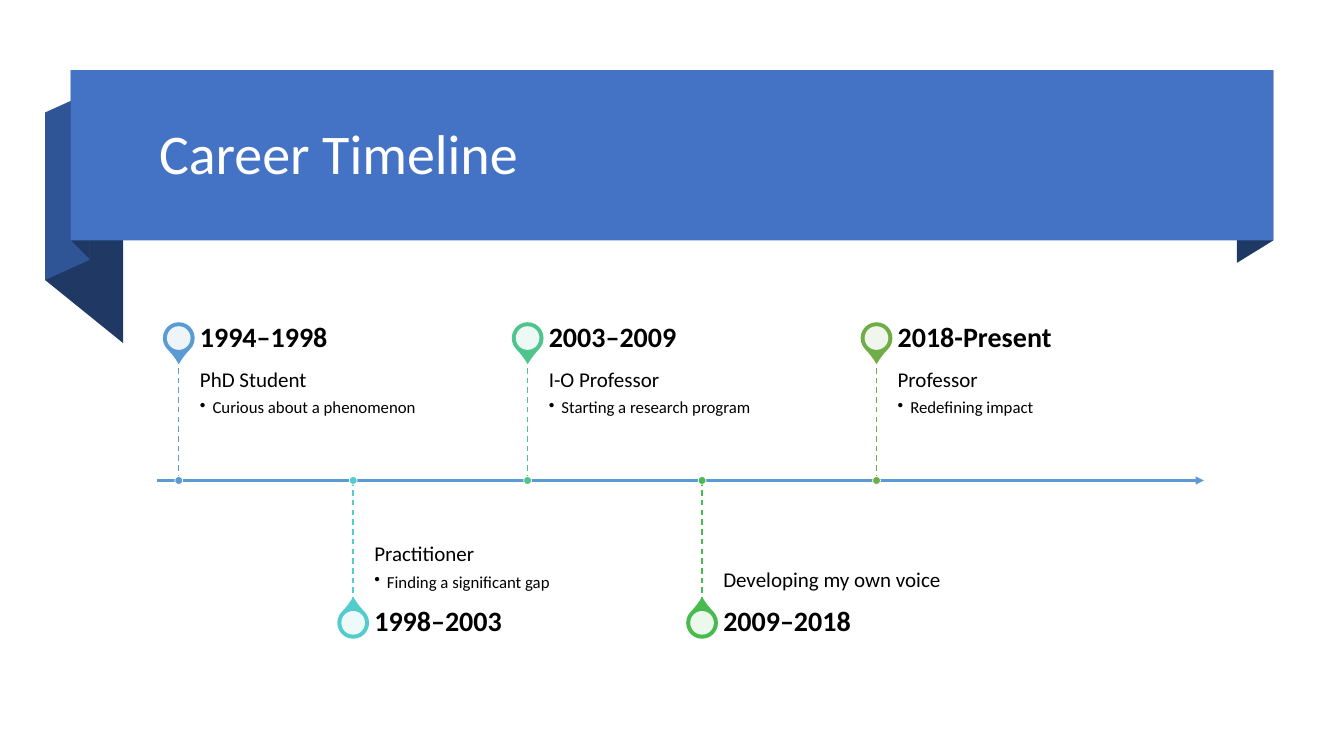
from pptx import Presentation
from pptx.dml.color import RGBColor
from pptx.enum.dml import MSO_LINE
from pptx.enum.shapes import MSO_CONNECTOR, MSO_SHAPE
from pptx.enum.text import MSO_ANCHOR, MSO_AUTO_SIZE, PP_ALIGN
from pptx.oxml.ns import qn
from pptx.util import Pt
from lxml.etree import SubElement

FONT = "Calibri"
MILESTONES = [
    ("1994–1998", "PhD Student", "Curious about a phenomenon", "5B9BD5"),
    ("1998–2003", "Practitioner", "Finding a significant gap", "54CCCD"),
    ("2003–2009", "I-O Professor", "Starting a research program", "4DC58D"),
    ("2009–2018", "Developing my own voice", None, "48BB4F"),
    ("2018-Present", "Professor", "Redefining impact", "70AD47"),
]


def color(value):
    return RGBColor.from_string(value)


def paint(shape, fill, line=None, line_width=1):
    shape.shadow.inherit = False
    shape.fill.solid()
    shape.fill.fore_color.rgb = color(fill)
    if line:
        shape.line.color.rgb = color(line)
        shape.line.width = Pt(line_width)
    else:
        shape.line.fill.background()


def add_polygon(slide, left, top, points, fill):
    corners = [(Pt(left + x), Pt(top + y)) for x, y in points]
    builder = slide.shapes.build_freeform(*corners[0], scale=1.0)
    builder.add_line_segments(corners[1:], close=True)
    paint(builder.convert_to_shape(), fill)


def add_centered(slide, kind, x, y, size):
    return slide.shapes.add_shape(
        kind, Pt(x - size / 2), Pt(y - size / 2), Pt(size), Pt(size))


def add_line(slide, x1, y1, x2, y2, line_color, width):
    line = slide.shapes.add_connector(
        MSO_CONNECTOR.STRAIGHT, Pt(x1), Pt(y1), Pt(x2), Pt(y2))
    line.line.color.rgb = color(line_color)
    line.line.width = Pt(width)
    SubElement(line._element.spPr, qn("a:effectLst"))
    return line


def set_frame(frame, anchor, margins):
    frame.word_wrap = True
    frame.auto_size = MSO_AUTO_SIZE.NONE
    frame.vertical_anchor = anchor
    (frame.margin_left, frame.margin_top,
     frame.margin_right, frame.margin_bottom) = [Pt(margin) for margin in margins]


def write(paragraph, text, size, text_color="000000", bold=False, space_after=0):
    paragraph.alignment = PP_ALIGN.LEFT
    paragraph.line_spacing = 0.9
    paragraph.space_after = Pt(space_after)
    run = paragraph.add_run()
    run.text = text
    run.font.name = FONT
    run.font.size = Pt(size)
    run.font.bold = bold
    run.font.color.rgb = color(text_color)


def add_bullet(paragraph):
    paragraph.level = 1
    properties = paragraph._p.get_or_add_pPr()
    properties.set("marL", str(Pt(9)))
    properties.set("indent", str(Pt(-9)))
    SubElement(properties, qn("a:buChar")).set("char", "•")


def add_ribbon(slide, left, top, width, height):
    folds = [
        ([(width, height), (width - 26, height + 16),
          (width - 26, 15), (width, 0)], "203864"),
        ([(37.4, 194.8), (-18.3, 149.8), (-18.3, 30.2), (37.4, 75.6)], "203864"),
        ([(13.5, 135.4), (-18.3, 149.8), (-18.3, 30.2), (13.5, 15.8)], "2F5597"),
        ([(13.5, 134.8), (0.2, height), (0.2, 0), (13.5, 13.7)], "203864"),
    ]
    for points, fill in folds:
        add_polygon(slide, left, top, points, fill)
    band = slide.shapes.add_shape(
        MSO_SHAPE.RECTANGLE, Pt(left), Pt(top), Pt(width), Pt(height))
    paint(band, "4472C4")

    title = slide.shapes.title
    title.left, title.top = Pt(left + 56), Pt(top + 9.4)
    title.width, title.height = Pt(787.7), Pt(104.4)
    set_frame(title.text_frame, MSO_ANCHOR.MIDDLE, (7.2, 3.6, 7.2, 3.6))
    write(title.text_frame.paragraphs[0], "Career Timeline", 40, "FFFFFF")
    title._element.getparent().append(title._element)


def add_milestone(slide, x, axis, above, milestone):
    years, role, detail, accent = milestone
    stem, label_height, text_left, text_width = 86.6, 30.2, x + 15.1, 207.4
    direction = -1 if above else 1
    stem_end = axis + direction * stem
    pin_y = stem_end + direction * label_height / 2

    pin = add_centered(slide, MSO_SHAPE.TEAR, x, pin_y, 21.7)
    pin.adjustments[0] = 1.15
    pin.rotation = 135 if above else 315
    paint(pin, accent, accent)
    center = add_centered(slide, MSO_SHAPE.OVAL, x, pin_y, 16.9)
    paint(center, "FFFFFF")
    fill_color = center._element.spPr.find(qn("a:solidFill"))[0]
    SubElement(fill_color, qn("a:alpha")).set("val", "90000")

    body = slide.shapes.add_textbox(
        Pt(text_left), Pt(min(axis, stem_end)), Pt(text_width), Pt(stem)).text_frame
    if above:
        set_frame(body, MSO_ANCHOR.TOP, (0, 7.2, 7.2, 11.5))
    else:
        set_frame(body, MSO_ANCHOR.BOTTOM, (0, 11.5, 0, 7.2))
    write(body.paragraphs[0], role, 15, space_after=5.25)
    if detail:
        paragraph = body.add_paragraph()
        write(paragraph, detail, 12, space_after=1.8)
        add_bullet(paragraph)

    label = slide.shapes.add_textbox(
        Pt(text_left), Pt(pin_y - label_height / 2),
        Pt(text_width), Pt(label_height)).text_frame
    set_frame(label, MSO_ANCHOR.MIDDLE, (0, 0, 10.1, 0))
    write(label.paragraphs[0], years, 20, bold=True)

    stem_line = add_line(slide, x, axis, x, stem_end, accent, 1)
    stem_line.line.dash_style = MSO_LINE.DASH
    dot = add_centered(slide, MSO_SHAPE.OVAL, x, axis, 5.6)
    paint(dot, accent, "FFFFFF", 0.5)


def add_timeline(slide, left, axis, width):
    arrow = add_line(slide, left, axis, left + width, axis, "5B9BD5", 1.5)
    SubElement(arrow.line._get_or_add_ln(), qn("a:tailEnd")).set("type", "triangle")
    step = width / 6
    for index, milestone in enumerate(MILESTONES):
        add_milestone(slide, left + 15.4 + index * step, axis, index % 2 == 0, milestone)


def main():
    presentation = Presentation()
    presentation.slide_width, presentation.slide_height = Pt(960), Pt(540)
    slide = presentation.slides.add_slide(presentation.slide_layouts[5])
    add_ribbon(slide, 50.5, 50.2, 859, 121.6)
    add_timeline(slide, 112.3, 343.2, 747.6)
    presentation.save("out.pptx")


if __name__ == "__main__":
    main()
